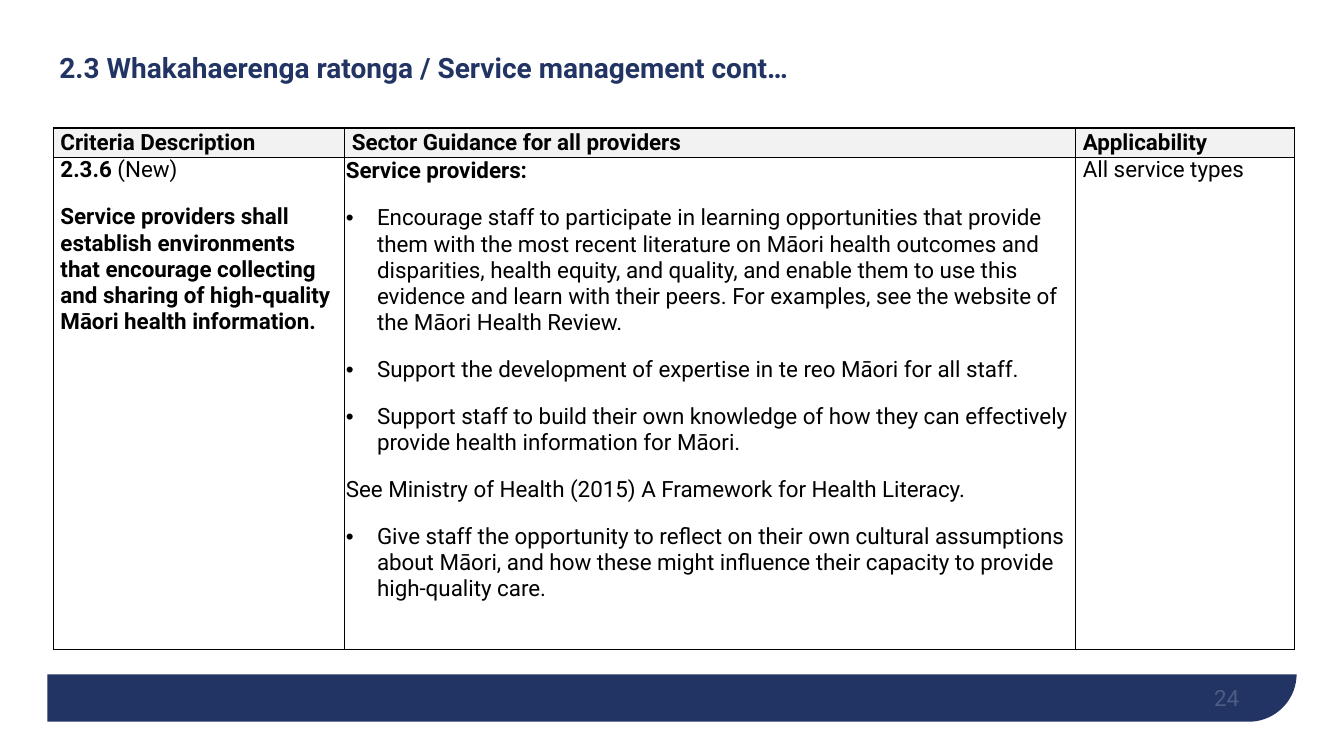
from lxml import etree
from pptx import Presentation
from pptx.dml.color import RGBColor
from pptx.enum.shapes import MSO_SHAPE
from pptx.enum.text import MSO_ANCHOR, PP_ALIGN
from pptx.oxml.ns import qn
from pptx.util import Emu, Pt

PX = 9144  # 100 px to the inch
NAVY = RGBColor(0x21, 0x34, 0x63)
WHITE = RGBColor(0xFF, 0xFF, 0xFF)
BLACK = RGBColor(0, 0, 0)
GREY = RGBColor(0xF2, 0xF2, 0xF2)
TOP, MIDDLE, BOTTOM = MSO_ANCHOR.TOP, MSO_ANCHOR.MIDDLE, MSO_ANCHOR.BOTTOM
LEFT, RIGHT = PP_ALIGN.LEFT, PP_ALIGN.RIGHT
RECT, ROUND_CORNER = MSO_SHAPE.RECTANGLE, MSO_SHAPE.ROUND_1_RECTANGLE

BULLET = "• "
HEADERS = ["Criteria Description", "Sector Guidance for all providers", "Applicability"]
# A paragraph is a list of (text, bold) runs.
CRITERION = [
    [("2.3.6 ", True), ("(New)", False)],
    [("Service providers shall establish environments that encourage collecting "
      "and sharing of high-quality Māori health information.", True)],
]
GUIDANCE = [
    [("Service providers:", True)],
    [("• Encourage staff to participate in learning opportunities that provide them "
      "with the most recent literature on Māori health outcomes and disparities, "
      "health equity, and quality, and enable them to use this evidence and learn "
      "with their peers. For examples, see the website of the Māori Health Review.", False)],
    [("• Support the development of expertise in te reo Māori for all staff.", False)],
    [("• Support staff to build their own knowledge of how they can effectively "
      "provide health information for Māori.", False)],
    [("See Ministry of Health (2015) A Framework for Health Literacy.", False)],
    [("• Give staff the opportunity to reflect on their own cultural assumptions about "
      "Māori, and how these might influence their capacity to provide high-quality care.",
      False)],
]
APPLICABILITY = [[("All service types", False)]]


def px(n):
    return Emu(n * PX)


class Deck:
    font = "Roboto"
    size = 16

    def __init__(self, width, height):
        self.prs = Presentation()
        self.prs.slide_width, self.prs.slide_height = px(width), px(height)
        self.slide = self.prs.slides.add_slide(self.prs.slide_layouts[6])

    def style(self, r, color, bold, size=None):
        r.font.name = self.font
        r.font.size = Pt(size or self.size)
        r.font.bold = bold
        r.font.color.rgb = color

    def shape(self, kind, x, y, w, h, color):
        s = self.slide.shapes.add_shape(kind, px(x), px(y), px(w), px(h))
        s.shadow.inherit = False
        s.fill.solid()
        s.fill.fore_color.rgb = color
        s.line.fill.background()
        return s

    def text(self, x, y, w, h, text, color, anchor, align=LEFT, size=None,
             bold=False, inset=(10, 5), spacing=1.0):
        """Add a one-line text box and return its run."""
        tf = self.slide.shapes.add_textbox(px(x), px(y), px(w), px(h)).text_frame
        tf.word_wrap = True
        tf.vertical_anchor = anchor
        tf.margin_left = tf.margin_right = px(inset[0])
        tf.margin_top = tf.margin_bottom = px(inset[1])
        tf.text = text
        p = tf.paragraphs[0]
        p.alignment = align
        p.line_spacing = spacing
        r = p.runs[0]
        self.style(r, color, bold, size)
        return r

    def bullet(self, p):
        pPr = p._p.get_or_add_pPr()
        pPr.set("marL", str(px(31)))
        pPr.set("indent", str(-px(31)))
        etree.SubElement(pPr, qn("a:buFont")).set("typeface", "Arial")
        etree.SubElement(pPr, qn("a:buChar")).set("char", BULLET.strip())

    def borders(self, cell):
        tcPr = cell._tc.get_or_add_tcPr()
        for side in ("a:lnL", "a:lnR", "a:lnT", "a:lnB"):
            ln = etree.SubElement(tcPr, qn(side), w=str(Pt(1)))
            fill = etree.SubElement(ln, qn("a:solidFill"))
            etree.SubElement(fill, qn("a:srgbClr"), val=str(BLACK))

    def cell(self, cell, paragraphs, fill=None, anchor=TOP, inset=(7, 0)):
        self.borders(cell)
        if fill is None:
            cell.fill.background()
        else:
            cell.fill.solid()
            cell.fill.fore_color.rgb = fill
        cell.vertical_anchor = anchor
        cell.margin_left = cell.margin_right = px(inset[0])
        cell.margin_top, cell.margin_bottom = px(inset[1]), 0
        tf = cell.text_frame
        for i, runs in enumerate(paragraphs):
            p = tf.add_paragraph() if i else tf.paragraphs[0]
            if runs[0][0].startswith(BULLET):
                self.bullet(p)
            if i:
                p.space_before = Pt(6)
            if i < len(paragraphs) - 1:
                p.space_after = Pt(9)
            for text, bold in runs:
                r = p.add_run()
                r.text = text.removeprefix(BULLET)
                self.style(r, BLACK, bold)

    def table(self, x, y, widths, heights):
        frame = self.slide.shapes.add_table(len(heights), len(widths), px(x), px(y),
                                            px(sum(widths)), px(sum(heights)))
        table = frame.table
        table.first_row = table.horz_banding = False
        for column, width in zip(table.columns, widths):
            column.width = px(width)
        for row, height in zip(table.rows, heights):
            row.height = px(height)
        return table


def main():
    deck = Deck(1333, 750)

    band = deck.shape(ROUND_CORNER, 47, 37, 1239, 679, NAVY)
    band.adjustments[0] = 0.07
    band.rotation = 180
    band._element.spPr.xfrm.set("flipH", "1")
    deck.shape(RECT, 0, 0, 1333, 669, WHITE)

    number = deck.text(929, 665, 300, 40, "24", WHITE, BOTTOM, RIGHT, inset=(0, 0))
    color = number._r.find(".//" + qn("a:srgbClr"))
    etree.SubElement(color, qn("a:alpha")).set("val", "20000")

    deck.text(49, 10, 1202, 117, "2.3 Whakahaerenga ratonga / Service management cont…",
              NAVY, MIDDLE, size=20, bold=True, spacing=0.9)

    table = deck.table(53, 127, [289, 725, 217], [29, 488])
    for i, header in enumerate(HEADERS):
        deck.cell(table.cell(0, i), [[(header, True)]], GREY, MIDDLE)
    deck.cell(table.cell(1, 0), CRITERION)
    deck.cell(table.cell(1, 1), GUIDANCE, inset=(1, 1))
    deck.cell(table.cell(1, 2), APPLICABILITY)

    deck.prs.save("out.pptx")


if __name__ == "__main__":
    main()
